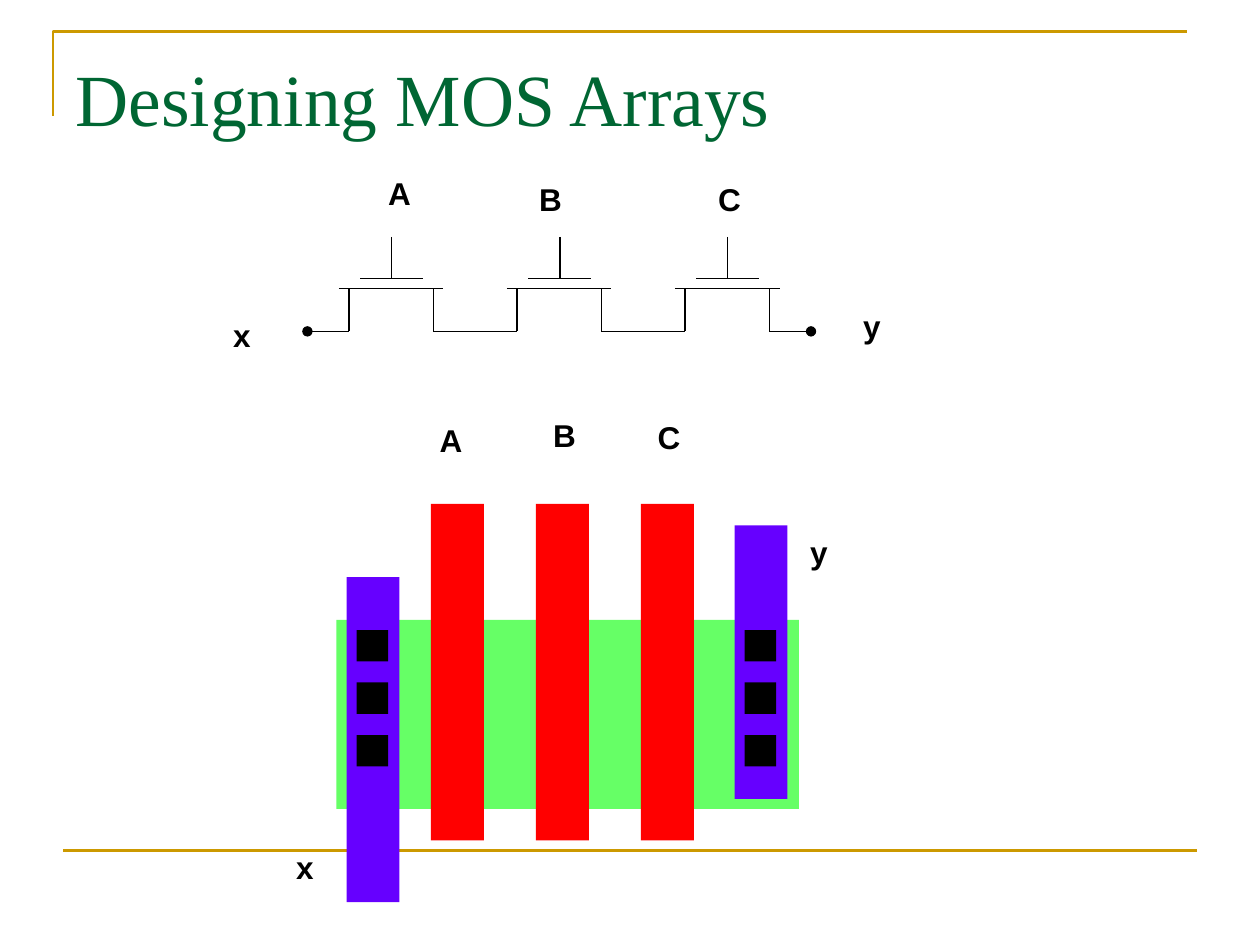
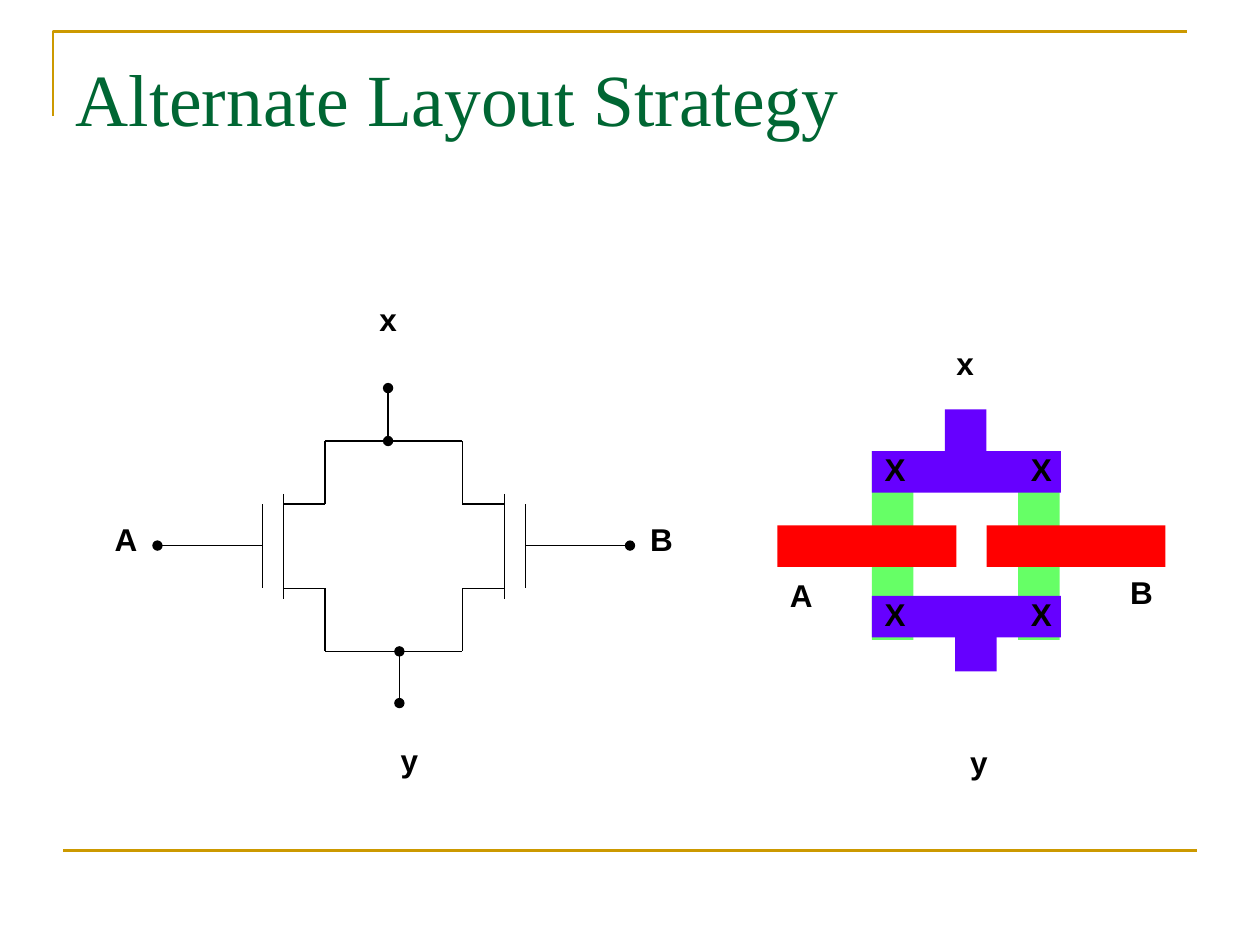
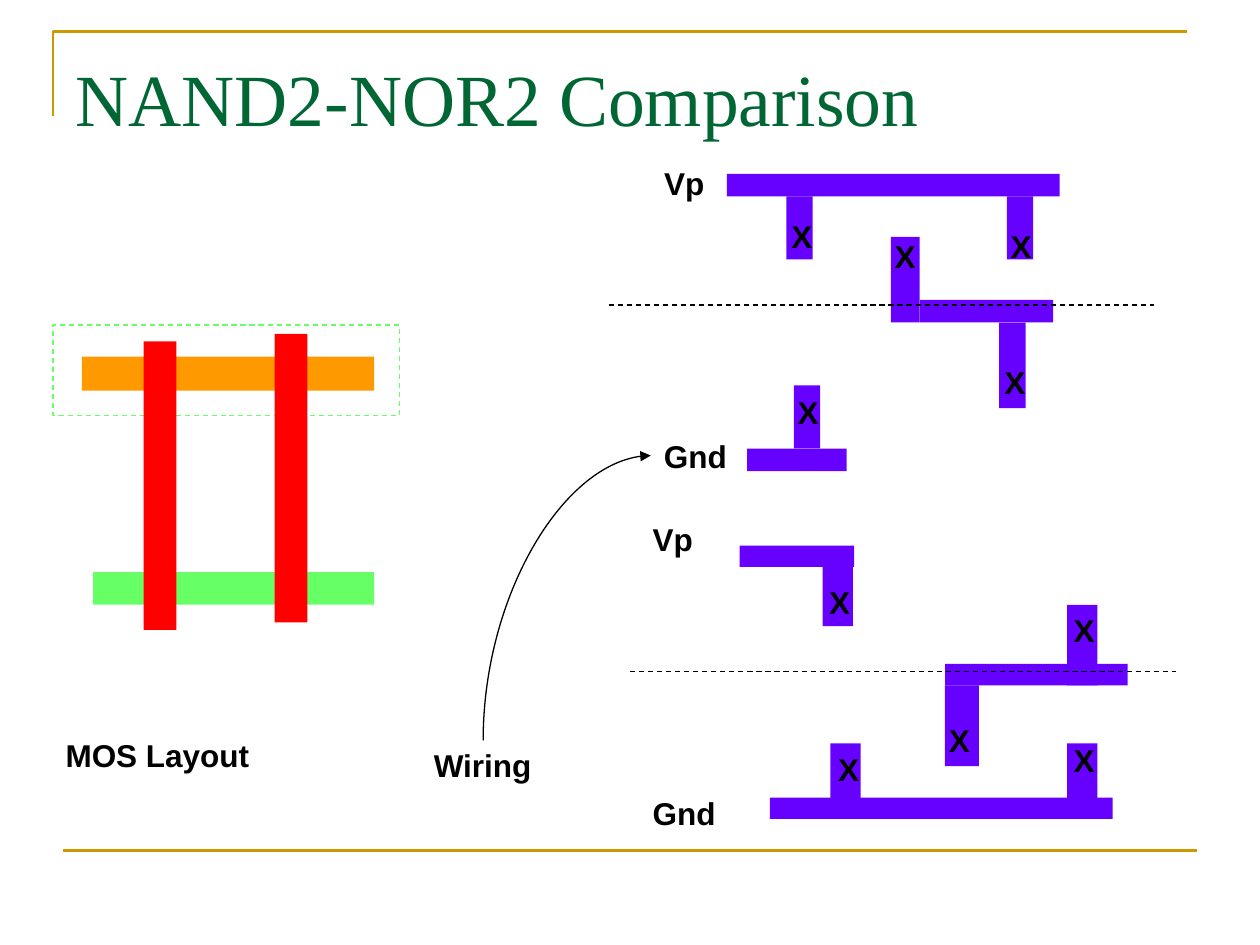
from lxml.etree import SubElement
from pptx import Presentation
from pptx.dml.color import RGBColor
from pptx.enum.dml import MSO_LINE
from pptx.enum.shapes import MSO_CONNECTOR as CONNECTOR, MSO_SHAPE as SHAPE
from pptx.enum.text import MSO_ANCHOR, MSO_AUTO_SIZE, PP_ALIGN
from pptx.oxml.ns import qn
from pptx.util import Inches, Pt

GOLD = "CC9900"
GREEN = "006633"
BLACK = "000000"
NDIFF = "66FF66"
PDIFF = "FF9900"
POLY = "FF0000"
METAL = "6600FF"

LABEL_WIDTHS = {"x": 0.34, "y": 0.34, "X": 0.37, "Vp": 0.52, "Gnd": 0.7,
                "MOS Layout": 1.66, "Wiring": 0.98}


def color(hex_string):
    return RGBColor.from_string(hex_string)


def write(text_frame, text, size=18, font="Arial", fill=BLACK, bold=True, align=PP_ALIGN.CENTER):
    paragraph = text_frame.paragraphs[0]
    paragraph.alignment = align
    run = paragraph.add_run()
    run.text = text
    run.font.size = Pt(size)
    run.font.name = font
    run.font.bold = bold
    run.font.color.rgb = color(fill)


def style_line(shape, stroke, width, dash=None):
    shape.line.color.rgb = color(stroke)
    shape.line.width = Pt(width)
    if dash:
        shape.line.dash_style = dash


class Region:
    def __init__(self, slide, left=0, top=0):
        self.shapes = slide.shapes
        self.left = left
        self.top = top

    def place(self, x, y):
        return Inches(self.left + x), Inches(self.top + y)

    def rectangle(self, x, y, width, height, fill=None, stroke=None):
        shape = self.shapes.add_shape(SHAPE.RECTANGLE, *self.place(x, y),
                                      Inches(width), Inches(height))
        shape.shadow.inherit = False
        if fill:
            shape.fill.solid()
            shape.fill.fore_color.rgb = color(fill)
        else:
            shape.fill.background()
        if stroke:
            style_line(shape, stroke, 0.75, MSO_LINE.DASH)
        else:
            shape.line.fill.background()

    def line(self, x1, y1, x2, y2, stroke=BLACK, width=0.75, dash=None,
             head=None, tail=None, kind=CONNECTOR.STRAIGHT):
        connector = self.shapes.add_connector(kind, *self.place(x1, y1), *self.place(x2, y2))
        style_line(connector, stroke, width, dash)
        properties = connector._element.spPr
        outline = properties.find(qn("a:ln"))
        for tag, end in (("a:headEnd", head), ("a:tailEnd", tail)):
            if end:
                SubElement(outline, qn(tag)).set("type", end)
        SubElement(properties, qn("a:effectLst"))
        return connector

    def label(self, text, x, y):
        width = LABEL_WIDTHS.get(text, 0.38)
        box = self.shapes.add_textbox(*self.place(x, y), Inches(width), Inches(0.4))
        box.text_frame.word_wrap = False
        box.text_frame.auto_size = MSO_AUTO_SIZE.SHAPE_TO_FIT_TEXT
        write(box.text_frame, text)

    def labels(self, *items):
        for item in items:
            self.label(*item)


def add_slide(presentation, title_text):
    slide = presentation.slides.add_slide(presentation.slide_layouts[5])
    page = Region(slide)
    builder = slide.shapes.build_freeform(*page.place(0.42, 0.92))
    builder.add_line_segments([page.place(0.42, 0.25), page.place(9.42, 0.25)], close=False)
    corner = builder.convert_to_shape()
    corner.shadow.inherit = False
    corner.fill.background()
    style_line(corner, GOLD, 1.5)
    page.line(0.5, 6.75, 9.5, 6.75, GOLD, 1.5)

    title = slide.shapes.title
    title.left, title.top = page.place(0.5, 0.3)
    title.width, title.height = Inches(9), Inches(1.25)
    frame = title.text_frame
    frame.vertical_anchor = MSO_ANCHOR.TOP
    frame.margin_top = Inches(0.12)
    write(frame, title_text, size=42, font="Times New Roman", fill=GREEN,
          bold=False, align=PP_ALIGN.LEFT)
    return slide


def series_transistor(slide, left, top, head=None, tail=None):
    cell = Region(slide, left, top)
    cell.line(0.25, 0.41, 1.08, 0.41)
    cell.line(0.42, 0.33, 0.92, 0.33)
    cell.line(0.67, 0, 0.67, 0.33)
    for x in (0.33, 1):
        cell.line(x, 0.41, x, 0.75)
    cell.line(0, 0.75, 0.33, 0.75, head=head)
    cell.line(1, 0.75, 1.33, 0.75, tail=tail)


def series_circuit(slide, left, top):
    for index, (head, tail) in enumerate((("oval", None), (None, None), (None, "oval"))):
        series_transistor(slide, left + index * 4 / 3, top, head, tail)
    Region(slide, left, top).labels(
        ("A", 0.54, -0.55), ("B", 1.74, -0.5), ("C", 3.16, -0.5),
        ("y", 4.31, 0.51), ("x", -0.69, 0.58))


def contact_column(slide, left, top, height, contact_top):
    column = Region(slide, left, top)
    column.rectangle(0, 0, 0.42, height, METAL)
    for index in range(3):
        column.rectangle(0.08, contact_top + index * 5 / 12, 0.25, 0.25, BLACK)


def series_layout(slide, left, top):
    layout = Region(slide, left, top)
    layout.rectangle(0, 0.92, 3.67, 1.5, NDIFF)
    for index in range(3):
        layout.rectangle(0.75 + index * 5 / 6, 0, 0.42, 2.67, POLY)
    contact_column(slide, left + 0.08, top + 0.58, 2.58, 0.42)
    contact_column(slide, left + 3.16, top + 0.17, 2.17, 0.83)
    layout.labels(("y", 3.66, 0.18), ("x", -0.42, 2.68), ("A", 0.72, -0.71),
                  ("B", 1.62, -0.75), ("C", 2.45, -0.73))


def parallel_transistor(circuit, gate, inward):
    channel, side, pin = (gate + inward * step for step in (0.17, 0.5, -0.83))
    circuit.line(gate, 0.92, gate, 1.59, width=0.5)
    circuit.line(channel, 0.84, channel, 1.67, width=0.5)
    circuit.line(gate, 1.25, pin, 1.25, tail="oval")
    for y, rail in ((0.92, 0.42), (1.59, 2.09)):
        circuit.line(channel, y, side, y)
        circuit.line(side, y, side, rail)


def parallel_circuit(slide, left, top):
    circuit = Region(slide, left, top)
    parallel_transistor(circuit, 0.83, 1)
    parallel_transistor(circuit, 2.92, -1)
    for rail, x, end in ((0.42, 1.83, 0), (2.09, 1.92, 2.5)):
        circuit.line(1.33, rail, 2.42, rail)
        circuit.line(x, rail, x, end, head="oval", tail="oval")
    circuit.labels(("A", -0.44, 1), ("B", 3.81, 1), ("x", 1.66, -0.75), ("y", 1.83, 2.75))


def parallel_layout(slide, left, top):
    layout = Region(slide, left, top)
    columns = (0.75, 1.91)
    for x in columns:
        layout.rectangle(x, 0.33, 0.33, 1.5, NDIFF)
    for y in (0.33, 1.48):
        layout.rectangle(0.75, y, 1.5, 0.33, METAL)
        for x in columns:
            layout.label("X", x, y - 0.06)
    for x, y in ((1.33, 0), (1.41, 1.75)):
        layout.rectangle(x, y, 0.33, 0.33, METAL)
    for x in (0, 1.66):
        layout.rectangle(x, 0.92, 1.42, 0.33, POLY)
    layout.labels(("x", 1.32, -0.57), ("A", 0, 1.27), ("B", 2.7, 1.25), ("y", 1.43, 2.6))


def mos_layout(slide, left, top):
    layout = Region(slide, left, top)
    layout.rectangle(0.32, 1.96, 2.23, 0.26, NDIFF)
    layout.rectangle(0, 0, 2.75, 0.72, stroke=NDIFF)
    layout.rectangle(0.23, 0.25, 2.32, 0.27, PDIFF)
    for x, y in ((0.72, 0.13), (1.76, 0.07)):
        layout.rectangle(x, y, 0.26, 2.29, POLY)
    layout.label("MOS Layout", 0, 3.21)


def gate_wiring(slide, left, top, straps, contacts, divider):
    wiring = Region(slide, left, top)
    for strap in straps:
        wiring.rectangle(*strap, METAL)
    for x, y in contacts:
        wiring.label("X", x, y)
    wiring.labels(("Vp", 0, 0), ("Gnd", 0, 2.17))
    x, y = divider
    wiring.line(x, y, x + 4.33, y, dash=MSO_LINE.DASH)


def wiring_pointer(slide, left, top):
    pointer = Region(slide, left, top)
    pointer.label("Wiring", 0, 0)
    curve = pointer.line(0.03, -1.79, 2.29, -0.46, tail="triangle", kind=CONNECTOR.CURVE)
    properties = curve._element.spPr
    properties.find(qn("a:prstGeom")).set("prst", "curvedConnector2")
    properties.find(qn("a:xfrm")).set("rot", str(270 * 60000))


def series_slide(presentation):
    slide = add_slide(presentation, "Designing MOS Arrays")
    series_circuit(slide, 2.44, 1.88)
    series_layout(slide, 2.67, 4)


def parallel_slide(presentation):
    slide = add_slide(presentation, "Alternate Layout Strategy")
    parallel_circuit(slide, 1.25, 3.08)
    parallel_layout(slide, 6.17, 3.25)


def comparison_slide(presentation):
    slide = add_slide(presentation, "NAND2-NOR2 Comparison")
    mos_layout(slide, 0.42, 2.58)
    gate_wiring(
        slide, 5.17, 1.25,
        straps=[(0.6, 0.13, 2.64, 0.18), (1.07, 0.31, 0.21, 0.5), (2.82, 0.31, 0.21, 0.5),
                (0.76, 2.31, 0.79, 0.18), (1.13, 1.81, 0.21, 0.5), (1.9, 0.63, 0.23, 0.68),
                (2.13, 1.13, 1.06, 0.18), (2.76, 1.31, 0.21, 0.68)],
        contacts=[(1.01, 0.42), (1.83, 0.58), (2.75, 0.5), (1.06, 1.82), (2.7, 1.58)],
        divider=(-0.34, 1.17))
    gate_wiring(
        slide, 5.08, 4.08,
        straps=[(1.03, 2.25, 2.72, 0.17), (1.51, 1.82, 0.24, 0.47), (3.39, 1.82, 0.24, 0.47),
                (0.79, 0.25, 0.91, 0.17), (1.45, 0.42, 0.24, 0.47), (2.42, 1.36, 0.27, 0.64),
                (2.42, 1.19, 1.45, 0.17), (3.39, 0.72, 0.24, 0.64)],
        contacts=[(1.47, 1.82), (2.35, 1.59), (3.34, 1.75), (1.4, 0.5), (3.34, 0.72)],
        divider=(-0.08, 1.25))
    wiring_pointer(slide, 3.34, 5.87)


def main():
    presentation = Presentation()
    presentation.slide_width = Inches(10)
    presentation.slide_height = Inches(7.5)
    series_slide(presentation)
    parallel_slide(presentation)
    comparison_slide(presentation)
    presentation.save("out.pptx")


if __name__ == "__main__":
    main()
